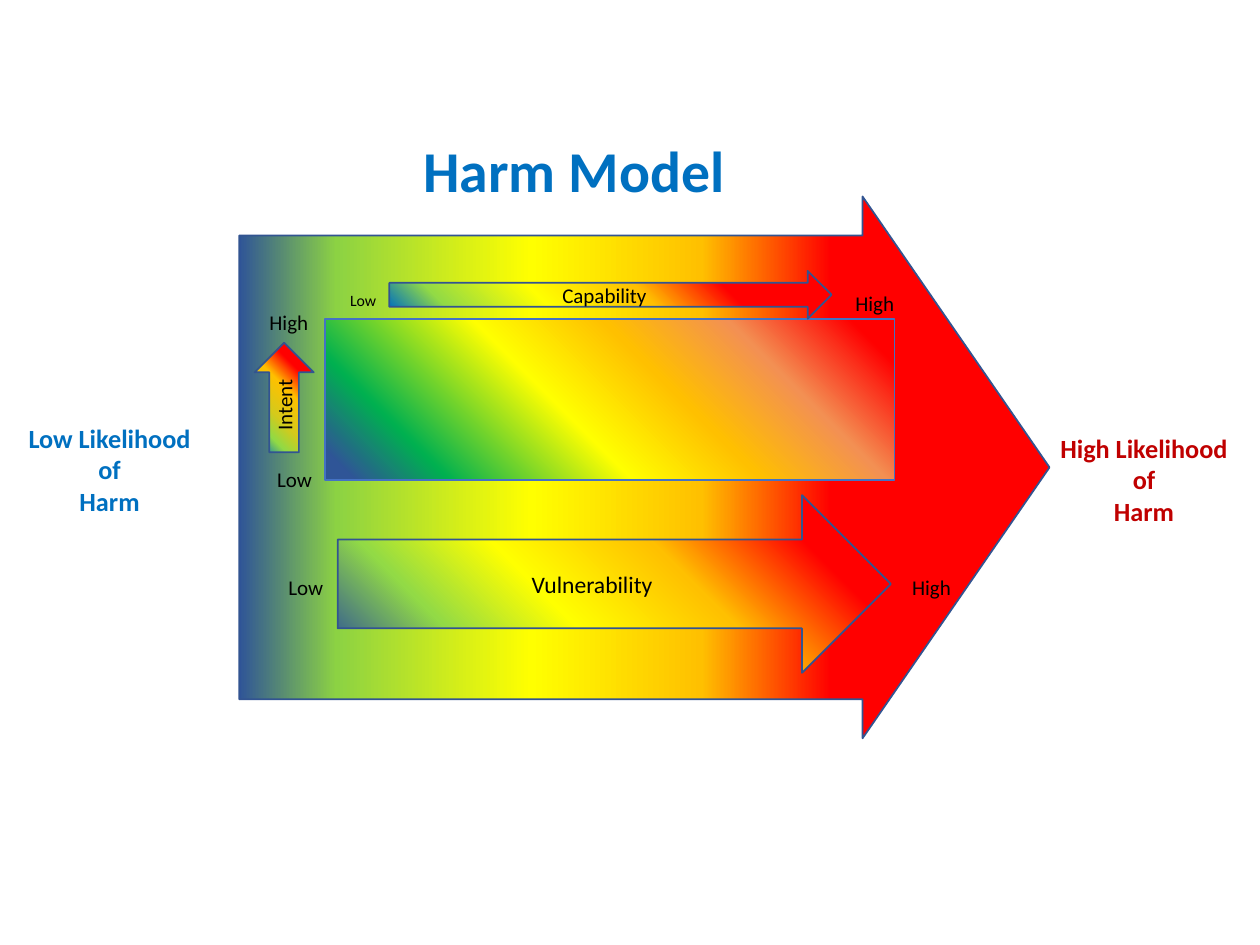
from pptx import Presentation
from pptx.dml.color import RGBColor
from pptx.enum.shapes import MSO_SHAPE
from pptx.enum.text import MSO_ANCHOR, MSO_AUTO_SIZE, PP_ALIGN
from pptx.oxml import parse_xml
from pptx.oxml.ns import nsdecls, qn
from pptx.util import Inches, Pt

BLACK = RGBColor(0x00, 0x00, 0x00)
BLUE = RGBColor(0x00, 0x70, 0xC0)
CRIMSON = RGBColor(0xC0, 0x00, 0x00)
NAVY = RGBColor(0x32, 0x54, 0x91)
EDGE = RGBColor(0x44, 0x72, 0xC4)
RED = RGBColor(0xFF, 0x00, 0x00)
CORAL = RGBColor(0xF3, 0x90, 0x53)
AMBER = RGBColor(0xFF, 0xC0, 0x00)
YELLOW = RGBColor(0xFF, 0xFF, 0x00)
OLIVE = RGBColor(0xD6, 0xCA, 0x1B)
LIME = RGBColor(0x92, 0xDA, 0x46)
LEAF = RGBColor(0x8C, 0xD2, 0x43)
GREEN = RGBColor(0x00, 0xB0, 0x50)
DEEP = RGBColor(0x2F, 0x55, 0x97)

CORNER = '<a:path path="circle"><a:fillToRect l="100000" b="100000"/></a:path>'


class Board:
    font = "Calibri"

    def __init__(self, slide):
        self.slide = slide

    def letter(self, frame, lines, size, color, bold=False, align=PP_ALIGN.CENTER):
        frame.text = lines
        for para in frame.paragraphs:
            para.alignment = align
            para.font.name = self.font
            para.font.size = Pt(size)
            para.font.bold = bold
            para.font.color.rgb = color

    def place(self, shape, box):
        shape.left, shape.top, shape.width, shape.height = map(Inches, box)

    def inset(self, frame):
        frame.margin_left = frame.margin_right = Inches(0.07)
        frame.margin_top = frame.margin_bottom = Inches(0.04)

    def title(self, text, box):
        shape = self.slide.shapes.title
        self.place(shape, box)
        frame = shape.text_frame
        self.inset(frame)
        frame.word_wrap = False
        frame.vertical_anchor = MSO_ANCHOR.TOP
        frame.auto_size = MSO_AUTO_SIZE.SHAPE_TO_FIT_TEXT
        self.letter(frame, text, 33, BLUE, True)

    def label(self, text, left, top, size=12):
        width = 0.51 if text == "High" else 0.48 if size == 12 else 0.41
        height = 0.3 if size == 12 else 0.25
        shape = self.slide.shapes.add_textbox(*map(Inches, (left, top, width, height)))
        frame = shape.text_frame
        frame.word_wrap = False
        frame.auto_size = MSO_AUTO_SIZE.SHAPE_TO_FIT_TEXT
        self.letter(frame, text, size, BLACK, align=PP_ALIGN.LEFT)

    def caption(self, text, left, top, color):
        shape = self.slide.shapes.add_textbox(*map(Inches, (left, top, 1.96, 0.83)))
        frame = shape.text_frame
        self.inset(frame)
        frame.word_wrap = True
        frame.auto_size = MSO_AUTO_SIZE.SHAPE_TO_FIT_TEXT
        self.letter(frame, text, 15, color, True)

    def shade(self, shape, stops, angle):
        marks = "".join(
            f'<a:gs pos="{pos * 1000}"><a:srgbClr val="{color}"/></a:gs>'
            for pos, color in stops
        )
        course = CORNER if angle is None else f'<a:lin ang="{angle * 60000}" scaled="0"/>'
        shape.fill.background()
        blank = shape.element.spPr.find(qn("a:noFill"))
        blank.getparent().replace(blank, parse_xml(
            f'<a:gradFill rotWithShape="1" {nsdecls("a")}>'
            f"<a:gsLst>{marks}</a:gsLst>{course}</a:gradFill>"
        ))

    def block(self, kind, box, stops, angle=None, line=NAVY):
        shape = self.slide.shapes.add_shape(kind, *map(Inches, box))
        shape.shadow.inherit = False
        self.shade(shape, stops, angle)
        shape.line.color.rgb = line
        shape.line.width = Pt(1)
        return shape

    def arrow(self, box, stops, text="", size=12, angle=None):
        shape = self.block(MSO_SHAPE.RIGHT_ARROW, box, stops, angle)
        if text:
            frame = shape.text_frame
            frame.vertical_anchor = MSO_ANCHOR.MIDDLE
            self.letter(frame, text, size, BLACK)
        return shape


def main():
    deck = Presentation()
    deck.slide_width, deck.slide_height = Inches(10), Inches(7.5)
    board = Board(deck.slides.add_slide(deck.slide_layouts[5]))

    harm = board.arrow(
        (1.9, 1.56, 6.43, 4.3),
        [(27, RED), (43, AMBER), (64, YELLOW), (88, LEAF), (100, DEEP)],
        angle=180,
    )
    harm.adjustments[0], harm.adjustments[1] = 0.856, 0.345
    board.arrow(
        (2.68, 3.93, 4.39, 1.41),
        [(18, RED), (39, AMBER), (61, YELLOW), (79, LIME), (97, DEEP)],
        "Vulnerability", 13.5,
    )
    board.block(
        MSO_SHAPE.RECTANGLE, (2.58, 2.53, 4.52, 1.28),
        [(6, RED), (23, CORAL), (40, AMBER), (58, YELLOW), (83, GREEN), (96, DEEP)],
        135, EDGE,
    )
    intent = board.arrow(
        (1.82, 2.92, 0.87, 0.47),
        [(25, RED), (43, AMBER), (65, OLIVE), (81, LIME), (98, BLUE)],
        "Intent",
    )
    intent.rotation = 270
    board.arrow(
        (3.09, 2.15, 3.51, 0.38),
        [(25, RED), (43, AMBER), (65, YELLOW), (86, LIME), (98, BLUE)],
        "Capability",
    )

    board.label("Low", 2.19, 4.51)
    board.label("High", 7.14, 4.51)
    board.label("Low", 2.1, 3.65)
    board.label("High", 2.04, 2.41)
    board.label("Low", 2.68, 2.26, 9)
    board.label("High", 6.69, 2.26)

    board.caption("High Likelihood\nof\nHarm", 8.1, 3.39, CRIMSON)
    board.caption("Low Likelihood\nof\nHarm", -0.11, 3.31, BLUE)
    board.title("Harm Model", (3.22, 1.03, 2.67, 0.63))
    deck.save("out.pptx")


if __name__ == "__main__":
    main()
